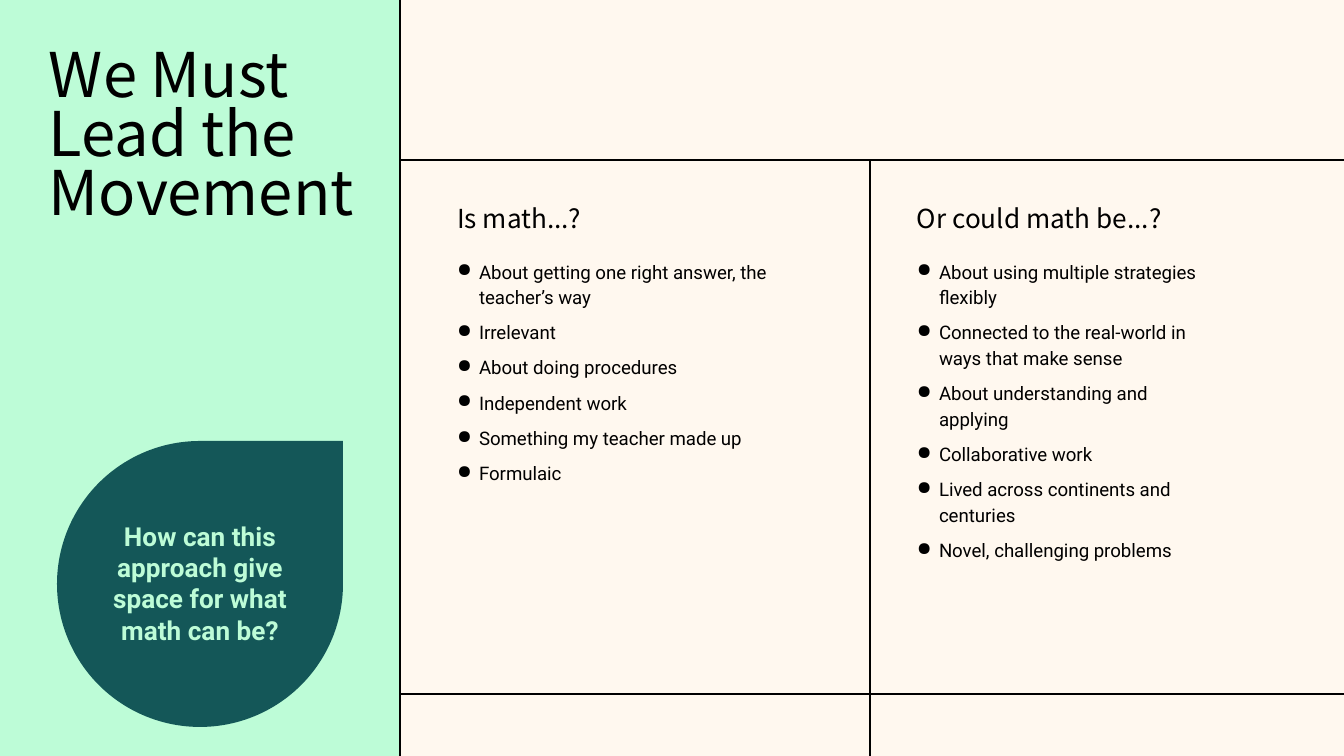
"""Build the "We Must Lead the Movement" slide."""
from lxml import etree
from pptx import Presentation
from pptx import util as u
from pptx.dml.color import RGBColor
from pptx.enum import shapes, text
from pptx.oxml.ns import qn

W, H = 1344, 756
PX = 914400 / 134.4
COLORS = {"paper": "FFF8EF", "mint": "BDFCD7", "teal": "145758", "ink": "000000"}
HEAD_FONT, BODY_FONT = "Noto Sans CJK KR", "Roboto"

TITLE = "We Must Lead the Movement"
QUESTION = "How can this approach give space for what math can be?"
COLUMNS = [
    {"left": 457, "head_width": 353, "list_width": 313, "list_height": 226,
     "head": "Is math...?",
     "items": ["About getting one right answer, the teacher’s way",
               "Irrelevant",
               "About doing procedures",
               "Independent work",
               "Something my teacher made up",
               "Formulaic"]},
    {"left": 917, "head_width": 281, "list_width": 281, "list_height": 304,
     "head": "Or could math be...?",
     "items": ["About using multiple strategies flexibly",
               "Connected to the real-world in ways that make sense",
               "About understanding and applying",
               "Collaborative work",
               "Lived across continents and centuries",
               "Novel, challenging problems"]},
]
PANEL_W, GRID_LEFT, GRID_TOP, GRID_BOTTOM, GRID_MID = 400, 349, 160, 694, 870
HEAD_TOP, LIST_TOP = 202, 257
GRID_LINES = [
    (GRID_LEFT, GRID_TOP, W, GRID_TOP),
    (GRID_MID, GRID_TOP, GRID_MID, H),
    (GRID_LEFT, GRID_BOTTOM, W, GRID_BOTTOM),
]


def px(n):
    return u.Emu(round(n * PX))


def color(name):
    return RGBColor.from_string(COLORS[name])


def add_line(s, *ends):
    line = s.shapes.add_connector(shapes.MSO_CONNECTOR.STRAIGHT, *map(px, ends))
    line.line.color.rgb = color("ink")
    line.line.width = u.Pt(0.75)
    etree.SubElement(line._element.spPr, qn("a:effectLst"))


def add_block(s, kind, box, fill):
    sp = s.shapes.add_shape(kind, *map(px, box))
    sp.shadow.inherit = False
    sp.fill.solid()
    sp.fill.fore_color.rgb = color(fill)
    sp.line.fill.background()
    return sp


def add_text(s, box, lines, size, font, ink="ink", bold=False, align=None, spacing=None):
    tf = s.shapes.add_textbox(*map(px, box)).text_frame
    tf.word_wrap = True
    tf.margin_left = tf.margin_right = tf.margin_top = tf.margin_bottom = 0
    for i, words in enumerate(lines):
        p = tf.add_paragraph() if i else tf.paragraphs[0]
        p.alignment = align
        p.line_spacing = spacing
        r = p.add_run()
        r.text = words
        r.font.size, r.font.name, r.font.bold = u.Pt(size), font, bold
        r.font.color.rgb = color(ink)
    return tf


def add_bullets(tf):
    for p in tf.paragraphs:
        p.space_before = u.Pt(5)
        pPr = p._p.get_or_add_pPr()
        pPr.set("marL", str(px(22)))
        pPr.set("indent", str(px(-22)))
        clr = etree.SubElement(pPr, qn("a:buClr"))
        etree.SubElement(clr, qn("a:srgbClr"), val=COLORS["ink"])
        etree.SubElement(pPr, qn("a:buChar"), char="●")


def main():
    prs = Presentation()
    prs.slide_width, prs.slide_height = px(W), px(H)
    s = prs.slides.add_slide(prs.slide_layouts[6])
    s.background.fill.solid()
    s.background.fill.fore_color.rgb = color("paper")

    for ends in GRID_LINES:
        add_line(s, *ends)
    for col in COLUMNS:
        add_text(s, (col["left"], HEAD_TOP, col["head_width"], 32),
                 [col["head"]], 14, HEAD_FONT)
        tf = add_text(s, (col["left"], LIST_TOP, col["list_width"], col["list_height"]),
                      col["items"], 10, BODY_FONT, spacing=1.15)
        add_bullets(tf)

    add_block(s, shapes.MSO_SHAPE.RECTANGLE, (0, 0, PANEL_W, H), "mint")
    add_text(s, (49, 50, 318, 179), [TITLE], 33, HEAD_FONT, spacing=0.8)
    add_line(s, PANEL_W, 0, PANEL_W, H)
    drop = add_block(s, shapes.MSO_SHAPE.TEAR, (57, 441, 286, 286), "teal")
    drop.adjustments[0] = 1
    add_text(s, (98, 520, 204, 126), [QUESTION], 14, BODY_FONT, "mint",
             bold=True, align=text.PP_ALIGN.CENTER)
    prs.save("out.pptx")


if __name__ == "__main__":
    main()
